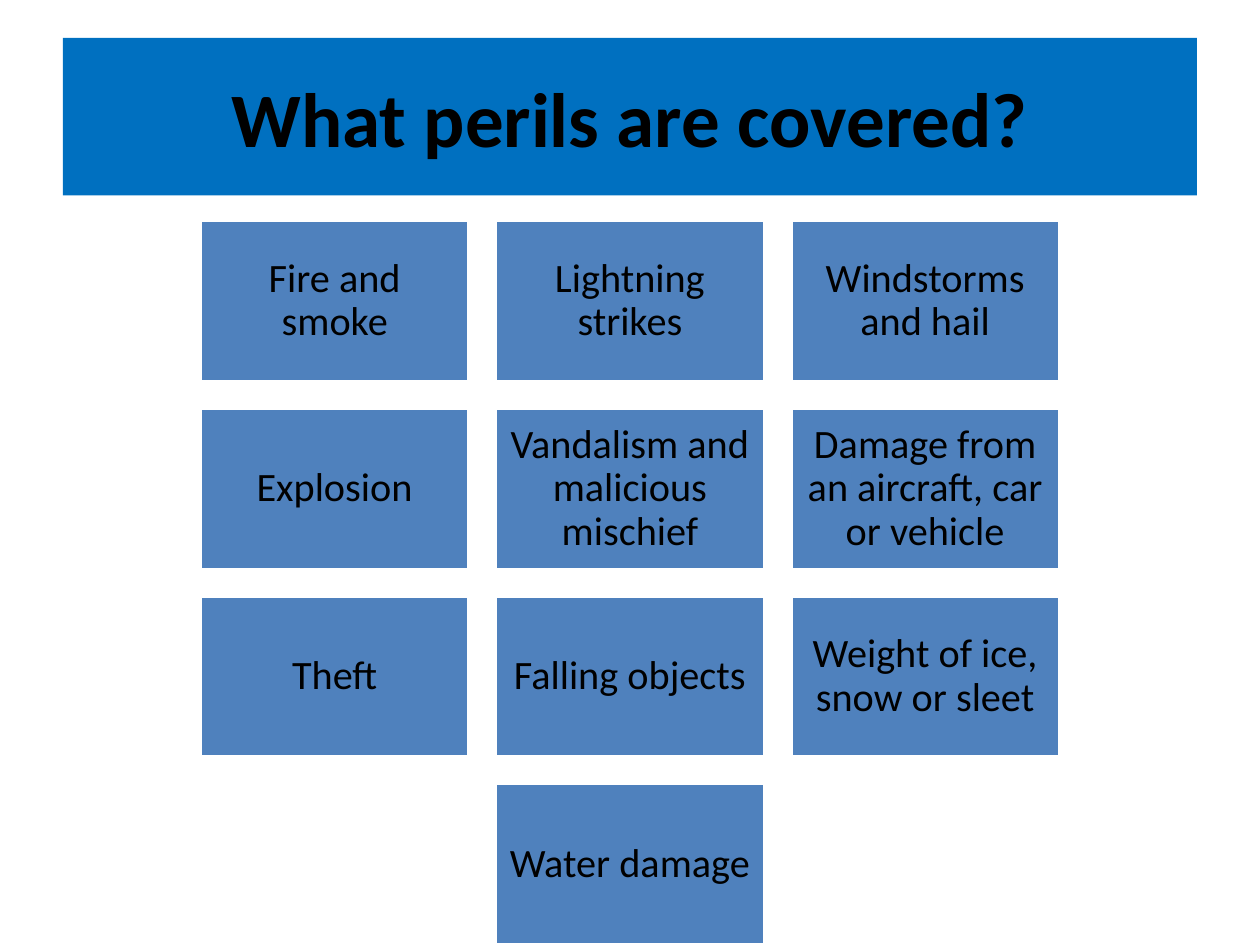
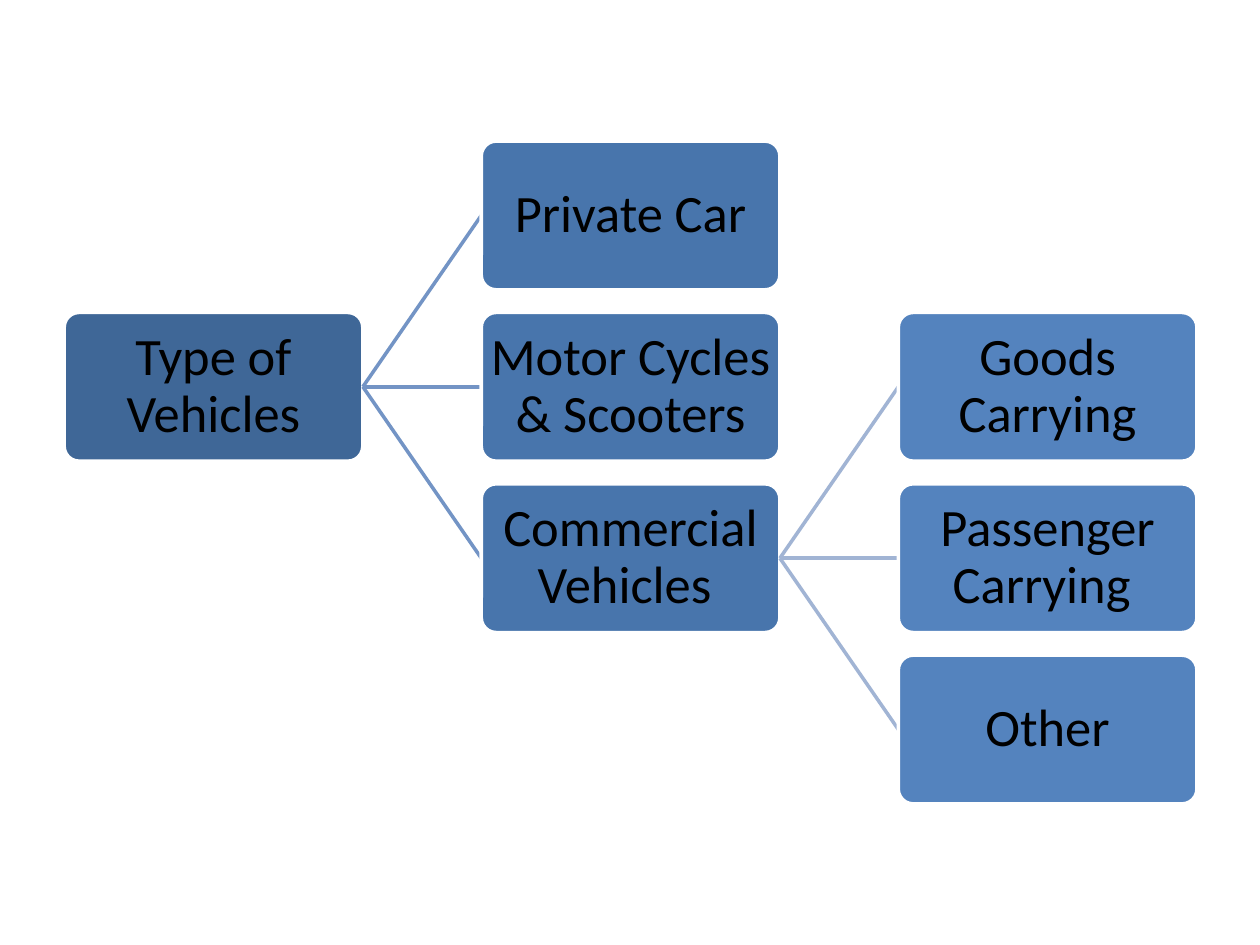
from lxml import etree
from pptx import Presentation
from pptx.dml.color import RGBColor
from pptx.enum.shapes import MSO_CONNECTOR, MSO_SHAPE
from pptx.enum.text import MSO_ANCHOR, PP_ALIGN
from pptx.oxml.ns import qn
from pptx.util import Inches, Pt

RECT, ROUNDED = MSO_SHAPE.RECTANGLE, MSO_SHAPE.ROUNDED_RECTANGLE
STRAIGHT = MSO_CONNECTOR.STRAIGHT
CENTER, MIDDLE = PP_ALIGN.CENTER, MSO_ANCHOR.MIDDLE

SLIDE_W, SLIDE_H = 10, 7.5
FONT, BLACK, WHITE = "Calibri", "000000", "FFFFFF"
TITLE_BLUE, PERIL_BLUE = "0070C0", "4F81BD"
LEVEL_FILLS = ["3F6797", "4875AC", "5483BE"]
BRANCH_COLORS = ["7394C5", "A1B4D4"]
LINE_WIDTH = 2

TITLE_FORMAT = {"size": Pt(44), "bold": True}
PERIL_FORMAT = {"size": Pt(23)}
VEHICLE_FORMAT = {"size": Pt(30)}

PERILS = [
    "Fire and smoke", "Lightning strikes", "Windstorms and hail",
    "Explosion", "Vandalism and malicious mischief",
    "Damage from an aircraft, car or vehicle",
    "Theft", "Falling objects", "Weight of ice, snow or sleet",
    "Water damage",
]
VEHICLE_TYPES = ("Type of Vehicles", [
    ("Private Car", []),
    ("Motor Cycles & Scooters", []),
    ("Commercial Vehicles ", [
        ("Goods Carrying", []),
        ("Passenger Carrying ", []),
        ("Other", []),
    ]),
])


def color(hex_value):
    return RGBColor.from_string(hex_value)


def add_box(slide, kind, box, fill, text, text_format, inset=0.1,
            outline=WHITE, line_spacing=0.9):
    """Add a filled shape with centred text."""
    shape = slide.shapes.add_shape(kind, *map(Inches, box))
    shape.shadow.inherit = False
    shape.fill.solid()
    shape.fill.fore_color.rgb = color(fill)
    if outline:
        shape.line.color.rgb = color(outline)
        shape.line.width = Pt(LINE_WIDTH)
    else:
        shape.line.fill.background()

    frame = shape.text_frame
    frame_format = {"word_wrap": True, "vertical_anchor": MIDDLE}
    for side in ("left", "top", "right", "bottom"):
        frame_format[f"margin_{side}"] = Inches(inset)
    for name, value in frame_format.items():
        setattr(frame, name, value)

    paragraph = frame.paragraphs[0]
    paragraph.alignment = CENTER
    paragraph.line_spacing = line_spacing
    run = paragraph.add_run()
    run.text = text
    for name, value in {"name": FONT, **text_format}.items():
        setattr(run.font, name, value)
    run.font.color.rgb = color(BLACK)
    return shape


def add_title(slide, box, text):
    add_box(slide, RECT, box, TITLE_BLUE, text, TITLE_FORMAT,
            outline=None, line_spacing=1.0)


def add_peril_grid(slide, box, perils, columns=3, gap=0.21):
    """Fill the box row by row, centring a short last row."""
    left, top, width, height = box
    rows = [perils[i:i + columns] for i in range(0, len(perils), columns)]
    tile_w = (width - gap * (columns - 1)) / columns
    tile_h = (height - gap * (len(rows) - 1)) / len(rows)
    for row_index, row in enumerate(rows):
        row_w = len(row) * (tile_w + gap) - gap
        row_left = left + (width - row_w) / 2
        tile_top = top + row_index * (tile_h + gap)
        for column, peril in enumerate(row):
            tile = (row_left + column * (tile_w + gap), tile_top, tile_w, tile_h)
            add_box(slide, RECT, tile, PERIL_BLUE, peril, PERIL_FORMAT)


def add_branch(slide, start, end, hex_value):
    branch = slide.shapes.add_connector(STRAIGHT, *map(Inches, start + end))
    branch.line.color.rgb = color(hex_value)
    branch.line.width = Pt(LINE_WIDTH)
    etree.SubElement(branch._element.spPr, qn("a:effectLst"))


def add_vehicle_tree(slide, box, node, level=0, column_gap=0.94, row_gap=0.18):
    """Place a node in its box and its children to the right of it."""
    left, top, width, height = box
    label, children = node
    vehicle = add_box(slide, ROUNDED, box, LEVEL_FILLS[level], label,
                      VEHICLE_FORMAT, inset=0.02)
    vehicle.adjustments[0] = 0.1

    child_left = left + width + column_gap
    for index, child in enumerate(children):
        offset = (index - (len(children) - 1) / 2) * (height + row_gap)
        middle = top + height / 2
        add_branch(slide, (left + width, middle),
                   (child_left, middle + offset), BRANCH_COLORS[level])
        add_vehicle_tree(slide, (child_left, top + offset, width, height),
                         child, level + 1, column_gap, row_gap)


def main():
    deck = Presentation()
    deck.slide_width, deck.slide_height = Inches(SLIDE_W), Inches(SLIDE_H)
    blank = deck.slide_layouts[6]

    # Covered perils
    perils_slide = deck.slides.add_slide(blank)
    add_title(perils_slide, (0.5, 0.3, 9, 1.25), "What perils are covered?")
    add_peril_grid(perils_slide, (1.59, 1.75, 6.82, 5.75), PERILS)

    # Vehicle types
    vehicles_slide = deck.slides.add_slide(blank)
    add_vehicle_tree(vehicles_slide, (0.51, 2.48, 2.37, 1.18), VEHICLE_TYPES)

    deck.save("out.pptx")


if __name__ == "__main__":
    main()
